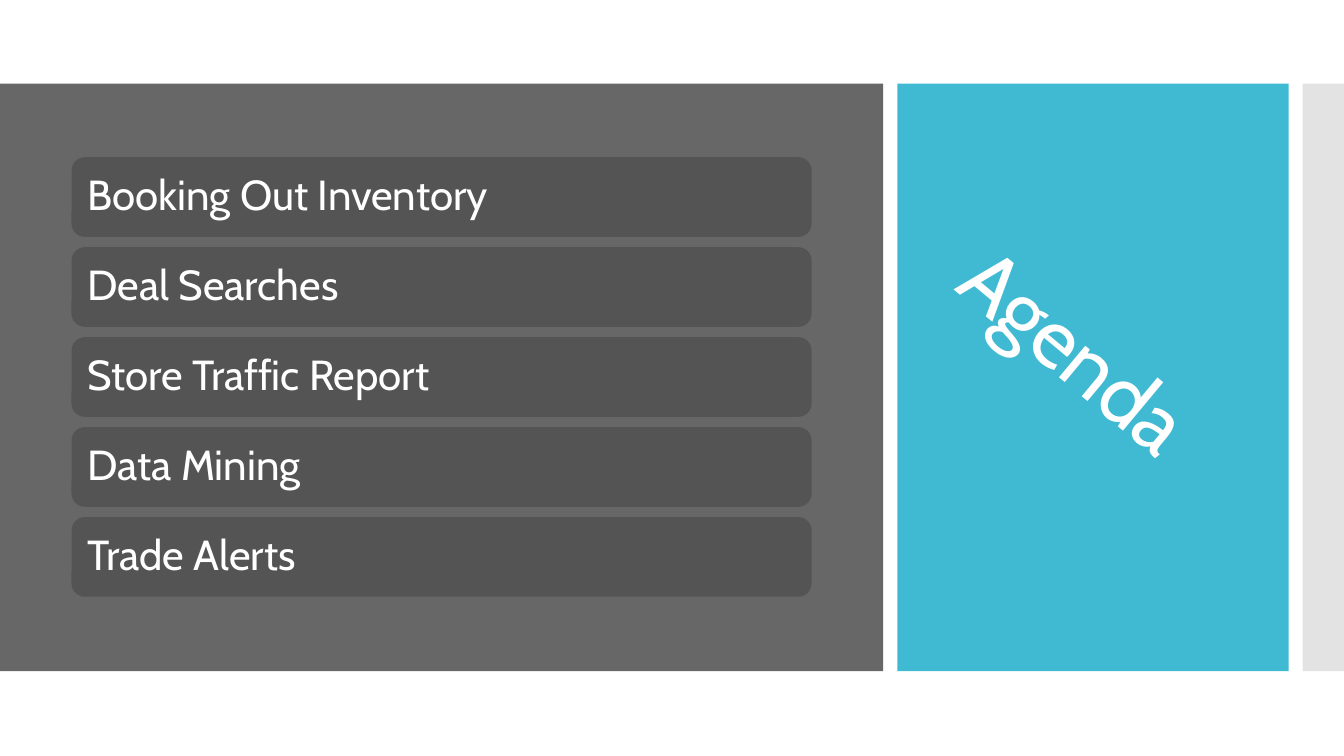
from dataclasses import dataclass

from pptx import Presentation
from pptx import util as u
from pptx.dml.color import RGBColor
from pptx.enum import shapes, text
from pptx.oxml import ns

FONT = "Cabin"
WHITE = "FFFFFF"
BAND_TOP, BAND_HEIGHT = 0.83, 5.83
TOPIC_LEFT, TOPIC_WIDTH, TOPIC_HEIGHT = 0.71, 7.34, 0.79
FIRST_TOP, LAST_TOP = 1.56, 5.13


@dataclass(frozen=True)
class Panel:
    left: float
    width: float
    color: str


PANELS = [
    Panel(0, 8.76, "676767"),
    Panel(8.9, 3.88, "40BAD2"),
    Panel(12.92, 0.41, "E3E3E3"),
]
TOPICS = [
    "Booking Out Inventory",
    "Deal Searches",
    "Store Traffic Report",
    "Data Mining",
    "Trade Alerts",
]


def rgb(color: str) -> RGBColor:
    return RGBColor.from_string(color)


def add_block(slide, kind, left: float, top: float, width: float, height: float, color: str):
    block = slide.shapes.add_shape(
        kind, u.Inches(left), u.Inches(top), u.Inches(width), u.Inches(height)
    )
    block.shadow.inherit = False
    block.fill.solid()
    block.fill.fore_color.rgb = rgb(color)
    block.line.fill.background()
    return block


def write_line(frame, wording: str, size: float):
    frame.word_wrap = True
    frame.vertical_anchor = text.MSO_ANCHOR.MIDDLE
    line = frame.paragraphs[0]
    line.text = wording
    line.alignment = text.PP_ALIGN.LEFT
    line.line_spacing = 0.9
    line.font.name = FONT
    line.font.size = u.Pt(size)
    line.font.color.rgb = rgb(WHITE)
    return line


def add_panel(slide, panel: Panel) -> None:
    add_block(
        slide, shapes.MSO_SHAPE.RECTANGLE,
        panel.left, BAND_TOP, panel.width, BAND_HEIGHT, panel.color,
    )


def add_topic(slide, topic: str, top: float) -> None:
    bar = add_block(
        slide, shapes.MSO_SHAPE.ROUNDED_RECTANGLE,
        TOPIC_LEFT, top, TOPIC_WIDTH, TOPIC_HEIGHT, "545454",
    )
    bar.text_frame.margin_left = bar.text_frame.margin_right = u.Inches(0.12)
    write_line(bar.text_frame, topic, 30)


def add_heading(slide) -> None:
    heading = slide.shapes.add_textbox(
        u.Inches(9.18), u.Inches(3.17), u.Inches(3.22), u.Inches(0.92)
    )
    heading.rotation = 39.8
    line = write_line(heading.text_frame, "Agenda", 60)
    line._p.pPr.find(ns.qn("a:defRPr")).set("spc", "-60")


def main() -> None:
    deck = Presentation()
    deck.slide_width, deck.slide_height = u.Inches(13.33), u.Inches(7.5)
    slide = deck.slides.add_slide(deck.slide_layouts[6])
    slide.background.fill.solid()
    slide.background.fill.fore_color.rgb = rgb(WHITE)

    for panel in PANELS:
        add_panel(slide, panel)
    add_heading(slide)
    pitch = (LAST_TOP - FIRST_TOP) / (len(TOPICS) - 1)
    for row, topic in enumerate(TOPICS):
        add_topic(slide, topic, FIRST_TOP + row * pitch)

    deck.save("out.pptx")


if __name__ == "__main__":
    main()
